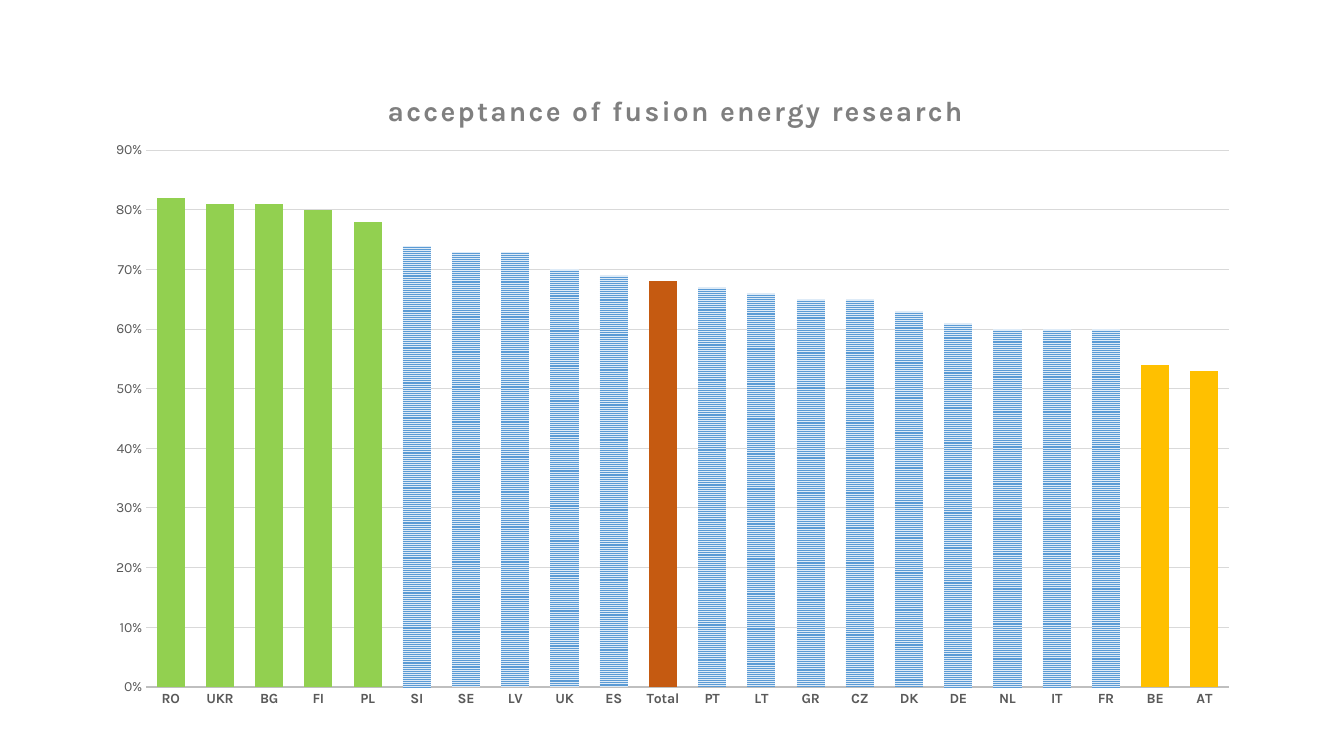
from lxml import etree
from pptx import Presentation
from pptx.chart.data import CategoryChartData
from pptx.dml.color import RGBColor
from pptx.enum.chart import XL_CHART_TYPE, XL_TICK_MARK
from pptx.enum.dml import MSO_PATTERN
from pptx.oxml.ns import qn
from pptx.util import Inches, Pt

COLUMNS = XL_CHART_TYPE.COLUMN_CLUSTERED
NO_TICKS = XL_TICK_MARK.NONE
STRIPES = MSO_PATTERN.NARROW_HORIZONTAL

FONT = "Karla"
COLORS = {
    "title": "7F7F7F",
    "label": "595959",
    "axis": "BFBFBF",
    "grid": "D9D9D9",
    "stripe": "5B9BD5",
    "stripe_gap": "DEEBF7",
    "high": "92D050",
    "total": "C55A11",
    "low": "FFC000",
}
ACCEPTANCE = {
    "RO": 0.82, "UKR": 0.81, "BG": 0.81, "FI": 0.8, "PL": 0.78, "SI": 0.74,
    "SE": 0.73, "LV": 0.73, "UK": 0.7, "ES": 0.69, "Total": 0.68, "PT": 0.67,
    "LT": 0.66, "GR": 0.65, "CZ": 0.65, "DK": 0.63, "DE": 0.61, "NL": 0.6,
    "IT": 0.6, "FR": 0.6, "BE": 0.54, "AT": 0.53,
}
GROUPS = {
    "high": ["RO", "UKR", "BG", "FI", "PL"],
    "total": ["Total"],
    "low": ["BE", "AT"],
}


def color(name):
    return RGBColor.from_string(COLORS[name])


def style_font(font, size, name, bold=False):
    font.name = FONT
    font.size = Pt(size)
    font.bold = bold
    font.color.rgb = color(name)


def style_line(line, name, width):
    line.color.rgb = color(name)
    line.width = Pt(width)


def place(parent, index, settings):
    for old in parent.findall(qn("c:layout")):
        parent.remove(old)
    layout = etree.Element(qn("c:layout"))
    manual = etree.SubElement(layout, qn("c:manualLayout"))
    for tag, value in settings.items():
        etree.SubElement(manual, qn(f"c:{tag}")).set("val", str(value))
    parent.insert(index, layout)


def style_title(chart):
    chart.has_title = True
    title = chart.chart_title
    title.include_in_layout = False
    para = title.text_frame.paragraphs[0]
    para.text = "acceptance of fusion energy research"
    span = para.runs[0]
    style_font(span.font, 20, "title", True)
    span._r.get_or_add_rPr().set("spc", "150")
    place(title._element, 1, {"xMode": "edge", "yMode": "edge", "x": 0.25, "y": 0.04})


def style_axes(chart):
    countries, shares = chart.category_axis, chart.value_axis
    for axis in (countries, shares):
        axis.major_tick_mark = axis.minor_tick_mark = NO_TICKS
        style_font(axis.tick_labels.font, 10, "label", axis is countries)
    style_line(countries.format.line, "axis", 1.5)
    shares.format.line.fill.background()
    shares.minimum_scale, shares.maximum_scale, shares.major_unit = 0, 0.9, 0.1
    shares.tick_labels.number_format = "0%"
    shares.tick_labels.number_format_is_linked = False
    style_line(shares.major_gridlines.format.line, "grid", 0.75)


def style_columns(plot):
    plot.gap_width, plot.overlap = 75, 40
    plot.vary_by_categories = False
    series = plot.series[0]
    series.invert_if_negative = False
    fill = series.format.fill
    fill.patterned()
    fill.pattern = STRIPES
    fill.fore_color.rgb = color("stripe")
    fill.back_color.rgb = color("stripe_gap")
    countries = list(ACCEPTANCE)
    for group, members in GROUPS.items():
        for country in members:
            point = series.points[countries.index(country)]
            point.format.fill.solid()
            point.format.fill.fore_color.rgb = color(group)


def add_acceptance_chart(page, box):
    data = CategoryChartData(number_format="0%")
    data.categories = list(ACCEPTANCE)
    data.add_series("Series 1", list(ACCEPTANCE.values()))
    chart = page.shapes.add_chart(COLUMNS, *box, data).chart
    chart.has_legend = False
    style_font(chart.font, 10, "label")
    style_title(chart)
    style_axes(chart)
    style_columns(chart.plots[0])
    plot_area = chart._chartSpace.chart.plotArea
    place(plot_area, 0, {
        "layoutTarget": "inner", "xMode": "edge", "yMode": "edge",
        "x": 0.046, "y": 0.136, "w": 0.934, "h": 0.813,
    })


def main():
    deck = Presentation()
    deck.slide_width, deck.slide_height = Inches(13.33), Inches(7.5)
    page = deck.slides.add_slide(deck.slide_layouts[6])
    box = [Inches(length) for length in (0.92, 0.6, 11.5, 6.55)]
    add_acceptance_chart(page, box)
    deck.save("out.pptx")


if __name__ == "__main__":
    main()
